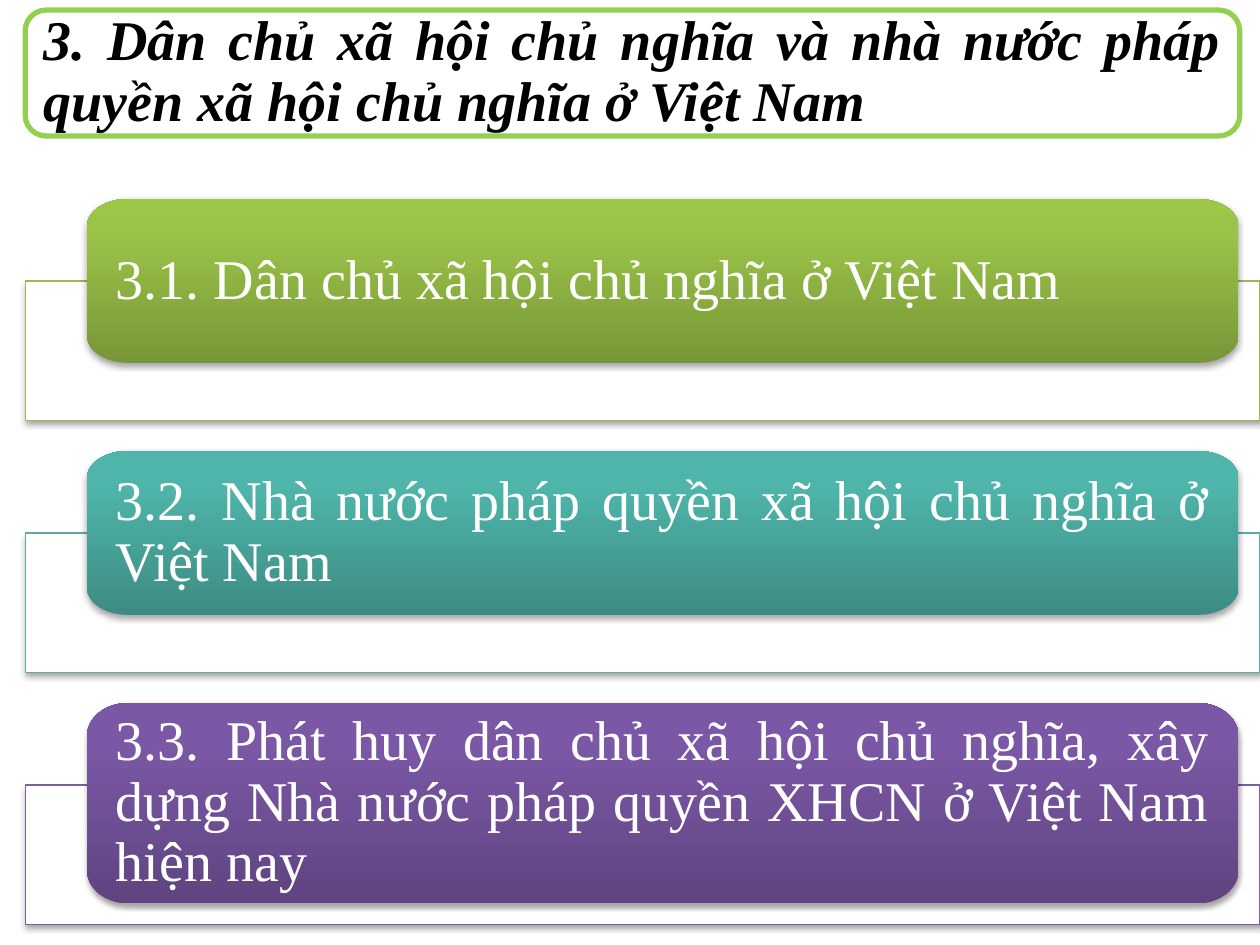
from copy import deepcopy

from lxml.etree import SubElement
from pptx import Presentation
from pptx.dml.color import RGBColor
from pptx.enum.shapes import MSO_SHAPE as Shape
from pptx.enum.text import MSO_ANCHOR as Anchor, MSO_AUTO_SIZE as AutoSize, PP_ALIGN as Align
from pptx.oxml import parse_xml
from pptx.oxml.ns import nsdecls, qn
from pptx.util import Inches, Pt

FONT = "Times New Roman"
WHITE = RGBColor(0xFF, 0xFF, 0xFF)
BLACK = RGBColor(0x00, 0x00, 0x00)
TITLE_GREEN = RGBColor(0x92, 0xD0, 0x50)
GREEN_LINE = RGBColor(0x98, 0xB9, 0x55)
GREEN_STOPS = (RGBColor(0x77, 0x97, 0x37), RGBColor(0x9B, 0xC3, 0x48), RGBColor(0x9D, 0xC7, 0x46))
TEAL_LINE = RGBColor(0x5A, 0xAD, 0xA4)
TEAL_STOPS = (RGBColor(0x3D, 0x8C, 0x83), RGBColor(0x4F, 0xB5, 0xAA), RGBColor(0x4E, 0xB8, 0xAC))
PURPLE_LINE = RGBColor(0x7D, 0x60, 0xA0)
PURPLE_STOPS = (RGBColor(0x5F, 0x44, 0x80), RGBColor(0x7B, 0x58, 0xA6), RGBColor(0x7C, 0x57, 0xA8))

TITLE = "3. Dân chủ xã hội chủ nghĩa và nhà nước pháp quyền xã hội chủ nghĩa ở Việt Nam"
SECTIONS = [
    ("3.1. Dân chủ xã hội chủ nghĩa ở Việt Nam", 1.3, GREEN_LINE, GREEN_STOPS),
    ("3.2. Nhà nước pháp quyền xã hội chủ nghĩa ở Việt Nam", 1.3, TEAL_LINE, TEAL_STOPS),
    ("3.3. Phát huy dân chủ xã hội chủ nghĩa, xây dựng Nhà nước pháp quyền XHCN ở Việt Nam hiện nay",
     1.59, PURPLE_LINE, PURPLE_STOPS),
]
FIRST_TOP, STEP, PANEL_OFFSET = 1.58, 2, 0.65
ARC_RATIO = 0.55


def write_text(shape, text, color=WHITE, bold=False, italic=False, side_inset=0.1):
    frame = shape.text_frame
    frame.word_wrap = True
    frame.auto_size = AutoSize.NONE
    frame.vertical_anchor = Anchor.MIDDLE
    frame.margin_left = frame.margin_right = Inches(side_inset)
    frame.margin_top = frame.margin_bottom = Inches(0.05)
    paragraph = frame.paragraphs[0]
    paragraph.alignment = Align.JUSTIFY
    paragraph.line_spacing = 0.9
    run = paragraph.add_run()
    run.text = text
    run.font.name = FONT
    run.font.size = Pt(32)
    run.font.bold = bold
    run.font.italic = italic
    run.font.color.rgb = color


def add_box(slide, kind, left, top, width, height, line, line_width):
    box = slide.shapes.add_shape(kind, Inches(left), Inches(top), Inches(width), Inches(height))
    box.fill.solid()
    box.fill.fore_color.rgb = WHITE
    box.line.color.rgb = line
    box.line.width = Pt(line_width)
    box.shadow.inherit = False
    return box


def add_shadow(shape):
    shape.shadow.inherit = False
    effects = shape._element.spPr.find(qn("a:effectLst"))
    effects.append(parse_xml(
        f'<a:outerShdw {nsdecls("a")} blurRad="{Pt(3.1)}" dist="{Pt(1.8)}" dir="5400000" rotWithShape="0">'
        '<a:srgbClr val="000000"><a:alpha val="35000"/></a:srgbClr></a:outerShdw>'))


def set_gradient(shape, colors):
    shape.fill.gradient()
    shape.fill.gradient_angle = 90
    stop_list = shape._element.spPr.find(qn("a:gradFill")).find(qn("a:gsLst"))
    stop_list.append(deepcopy(stop_list[-1]))
    for stop, position, color in zip(shape.fill.gradient_stops, (0, 0.8, 1), colors):
        stop.position = position
        stop.color.rgb = color


def round_corners(shape):
    outline = next(shape._element.iter(qn("a:path")))
    points = [(int(point.get("x")), int(point.get("y"))) for point in outline.iter(qn("a:pt"))]
    for index in range(1, 8, 2):
        start, end = points[index - 1], points[index]
        corner = (start[0], end[1]) if index in (1, 5) else (end[0], start[1])
        controls = [
            tuple(round(a + ARC_RATIO * (b - a)) for a, b in zip(anchor, corner))
            for anchor in (start, end)
        ]
        segment = outline[index]
        curve = SubElement(outline, qn("a:cubicBezTo"))
        for x, y in (*controls, end):
            SubElement(curve, qn("a:pt"), x=str(x), y=str(y))
        outline.replace(segment, curve)


def add_heading(slide, text, top, height, colors):
    left, right, bottom = 0.69, 9.83, top + height
    radius_x, radius_y = 0.32, height / 6
    points = [
        (Inches(x), Inches(y)) for x, y in (
            (left, top + radius_y), (left + radius_x, top),
            (right - radius_x, top), (right, top + radius_y),
            (right, bottom - radius_y), (right - radius_x, bottom),
            (left + radius_x, bottom), (left, bottom - radius_y),
        )
    ]
    builder = slide.shapes.build_freeform(*points[0])
    builder.add_line_segments(points[1:], close=True)
    heading = builder.convert_to_shape()
    round_corners(heading)
    set_gradient(heading, colors)
    heading.line.fill.background()
    add_shadow(heading)
    write_text(heading, text, side_inset=0.23)


def main():
    presentation = Presentation()
    presentation.slide_width = Inches(10)
    presentation.slide_height = Inches(7.5)
    slide = presentation.slides.add_slide(presentation.slide_layouts[6])
    title = add_box(slide, Shape.ROUNDED_RECTANGLE, 0.2, 0.08, 9.64, 1, TITLE_GREEN, 3)
    write_text(title, TITLE, color=BLACK, bold=True, italic=True)
    for index, (text, height, line, colors) in enumerate(SECTIONS):
        top = FIRST_TOP + index * STEP
        panel = add_box(slide, Shape.RECTANGLE, 0.2, top + PANEL_OFFSET, 9.8, 1.11, line, 0.75)
        add_shadow(panel)
        add_heading(slide, text, top, height, colors)
    presentation.save("out.pptx")


if __name__ == "__main__":
    main()
